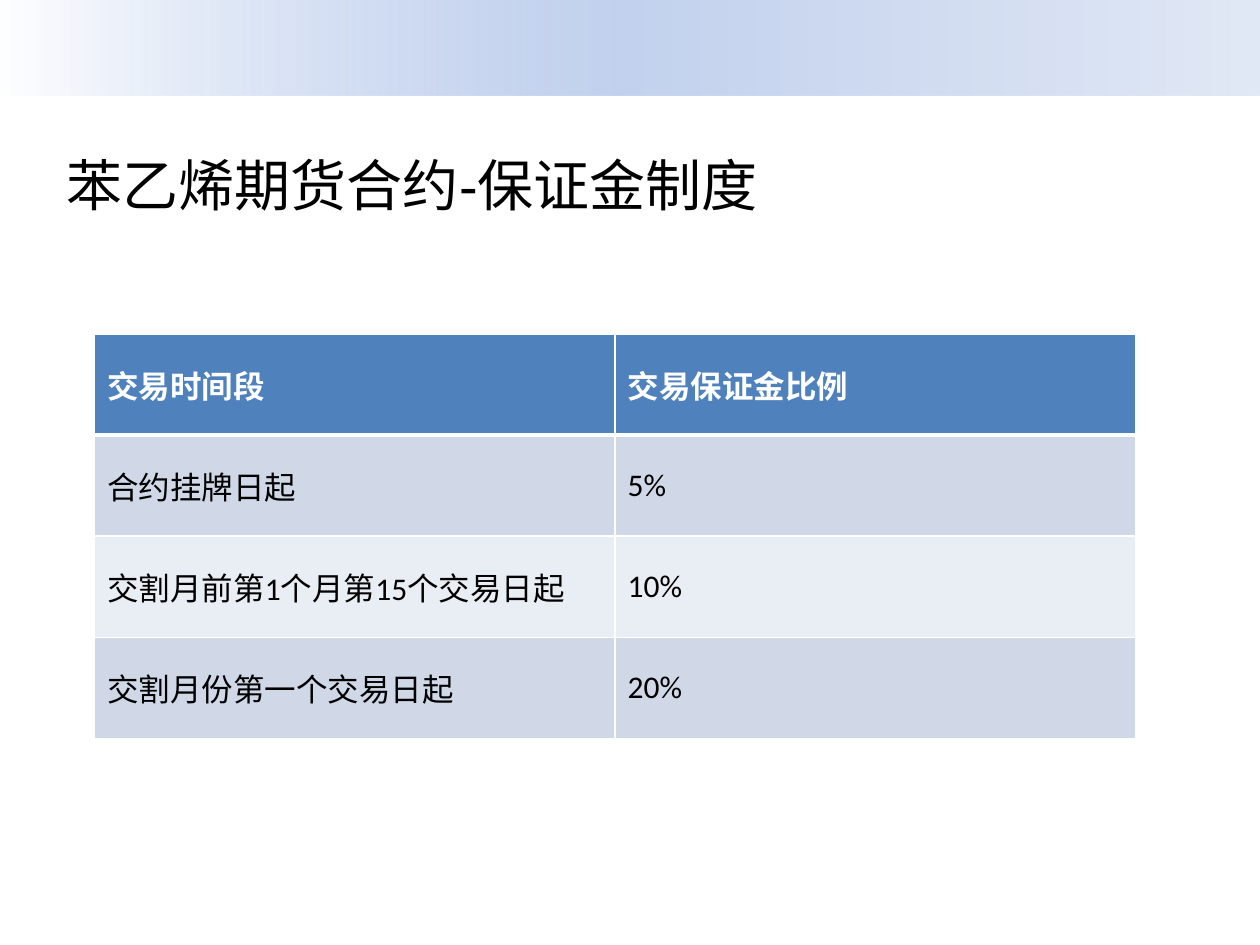
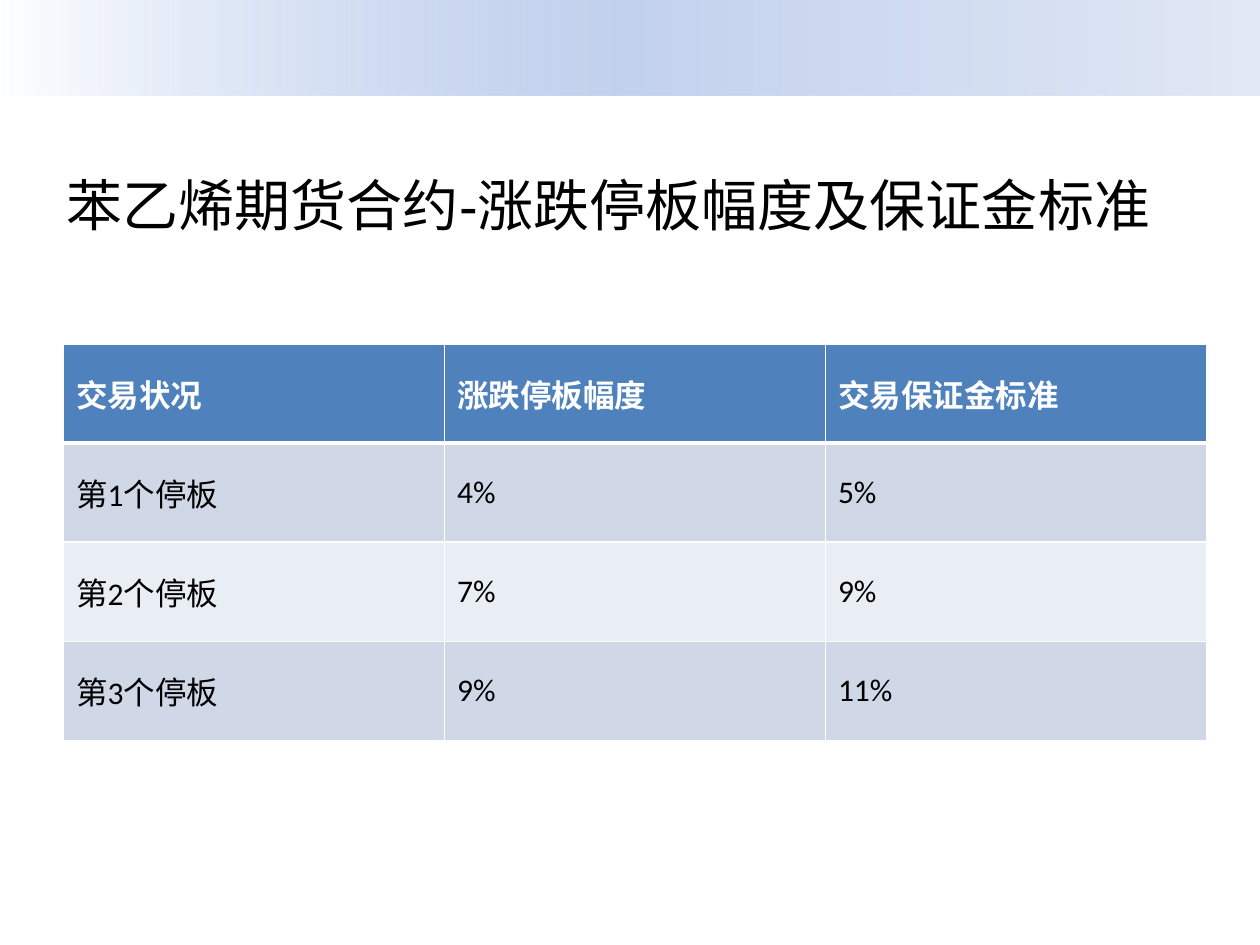
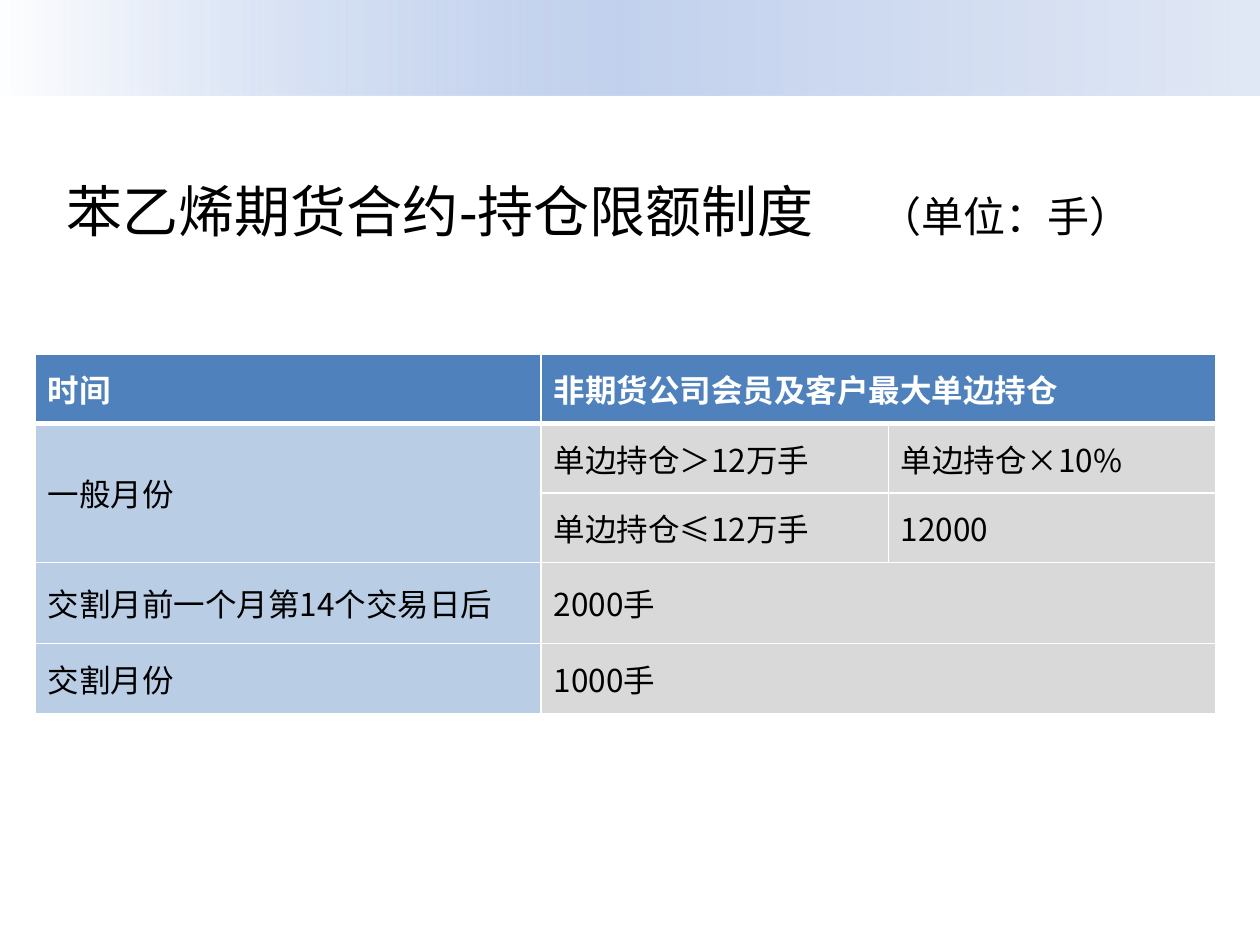
from lxml.etree import SubElement
from pptx import Presentation
from pptx.dml.color import RGBColor
from pptx.enum.lang import MSO_LANGUAGE_ID as Language
from pptx.enum.shapes import MSO_SHAPE as Preset
from pptx.enum.text import MSO_ANCHOR as Anchor, MSO_AUTO_SIZE as AutoSize, PP_ALIGN as Align
from pptx.oxml import parse_xml
from pptx.oxml.ns import nsdecls, qn
from pptx.util import Cm, Pt

COLORS = {
    "text": "000000", "white": "FFFFFF", "header": "4F81BD",
    "band_dark": "D0D8E8", "band_light": "E9EDF4",
    "period": "B9CDE5", "limit": "D9D9D9",
    "glow_start": "9AB5E4", "glow_middle": "C2D1ED", "glow_end": "E1E8F5",
}
TITLE_FONT, TABLE_FONT, CJK_FONT = "Arial", "Calibri", "Noto Sans CJK JP"


def add_span(para, text, *, size=18, font=TABLE_FONT, color="text", bold=False):
    span = para.add_run()
    span.text = text
    span.font.size = Pt(size)
    span.font.name = font
    span.font.bold = bold
    span.font.color.rgb = RGBColor.from_string(COLORS[color])
    span.font.language_id = Language.SIMPLIFIED_CHINESE


def banded(row, column):
    return "band_dark" if row % 2 else "band_light"


def by_column(row, column):
    return "limit" if column else "period"


class ContractDeck:
    def __init__(self):
        self.deck = Presentation()
        self.deck.slide_width, self.deck.slide_height = Cm(25.4), Cm(19.05)
        self.layout = self.deck.slide_layouts[5]
        self.page = None

    def add_page(self):
        self.page = self.deck.slides.add_slide(self.layout)
        if len(self.deck.slides) == 1:
            self.add_top_band()

    def add_top_band(self):
        """Draw the gradient band and hand it to the layout all pages share."""
        band = self.page.shapes.add_shape(Preset.RECTANGLE, 0, 0, self.deck.slide_width, Cm(1.93))
        band.shadow.inherit = False
        band.line.fill.background()
        stops = [(0, "glow_start", 0), (50, "glow_middle", 100), (100, "glow_end", 100)]
        stop_xml = "".join(
            f'<a:gs pos="{place * 1000}"><a:srgbClr val="{COLORS[color]}">'
            f'<a:alpha val="{opacity * 1000}"/></a:srgbClr></a:gs>'
            for place, color, opacity in stops)
        gradient = parse_xml(
            f'<a:gradFill {nsdecls("a")} rotWithShape="1"><a:gsLst>{stop_xml}</a:gsLst>'
            '<a:lin ang="0" scaled="0"/></a:gradFill>')
        band.element.spPr.find(qn("a:prstGeom")).addnext(gradient)
        self.layout.shapes.element.insert(2, band.element)

    def add_title(self, text, top, height=2, unit=None):
        title = self.page.shapes.title
        title.left, title.top, title.width, title.height = Cm(1.09), Cm(top), Cm(22.86), Cm(height)
        frame = title.text_frame
        frame.word_wrap = True
        frame.auto_size = AutoSize.NONE
        frame.vertical_anchor = Anchor.MIDDLE
        para = frame.paragraphs[0]
        para.alignment = Align.LEFT
        if unit:
            tabs = SubElement(para._p.get_or_add_pPr(), qn("a:tabLst"))
            SubElement(tabs, qn("a:tab"), pos=str(Cm(16.38)), algn="l")
            text += "\t"
        add_span(para, text, size=32, font=TITLE_FONT)
        if unit:
            add_span(para, unit, size=24, font=CJK_FONT)

    def add_table(self, rows, left, top, widths, heights, body_fill=banded, font=TABLE_FONT, merges=()):
        """Fill a grid; merges lists (first row, first column, last row, last column)."""
        table = self.page.shapes.add_table(
            len(rows), len(widths), Cm(left), Cm(top), Cm(sum(widths)), Cm(sum(heights))).table
        for column, width in zip(table.columns, widths):
            column.width = Cm(width)
        for line, height in zip(table.rows, heights):
            line.height = Cm(height)
        for row, texts in enumerate(rows):
            for column, text in enumerate(texts):
                cell = table.cell(row, column)
                self.add_borders(cell, row)
                cell.fill.solid()
                fill = body_fill(row, column) if row else "header"
                cell.fill.fore_color.rgb = RGBColor.from_string(COLORS[fill])
                cell.vertical_anchor = Anchor.MIDDLE
                if text:
                    add_span(cell.text_frame.paragraphs[0], text, font=font,
                             color="text" if row else "white", bold=row == 0)
        for first_row, first_column, last_row, last_column in merges:
            table.cell(first_row, first_column).merge(table.cell(last_row, last_column))

    def add_borders(self, cell, row):
        """Rule the cell in white, with a thick line under the header."""
        weights = {"L": 1, "R": 1, "T": 3 if row == 1 else 1, "B": 3 if row == 0 else 1}
        properties = cell._tc.get_or_add_tcPr()
        for side, weight in weights.items():
            border = SubElement(properties, qn(f"a:ln{side}"), w=str(Pt(weight)))
            fill = SubElement(border, qn("a:solidFill"))
            SubElement(fill, qn("a:srgbClr"), val=COLORS["white"])


def main():
    contract = ContractDeck()

    contract.add_page()
    contract.add_title("苯乙烯期货合约-保证金制度", top=2.72)
    margin_rows = [
        ("交易时间段", "交易保证金比例"),
        ("合约挂牌日起", "5%"),
        ("交割月前第1个月第15个交易日起", "10%"),
        ("交割月份第一个交易日起", "20%"),
    ]
    contract.add_table(margin_rows, 1.91, 6.73, [10.49] * 2, [2.04] * 4)

    contract.add_page()
    contract.add_title("苯乙烯期货合约-涨跌停板幅度及保证金标准", top=3.12)
    price_limit_rows = [
        ("交易状况", "涨跌停板幅度", "交易保证金标准"),
        ("第1个停板", "4%", "5%"),
        ("第2个停板", "7%", "9%"),
        ("第3个停板", "9%", "11%"),
    ]
    contract.add_table(price_limit_rows, 1.28, 6.93, [7.68] * 3, [2] * 4)

    contract.add_page()
    contract.add_title("苯乙烯期货合约-持仓限额制度", top=3.33, height=1.8, unit="（单位：手）")
    position_rows = [
        ("时间", "非期货公司会员及客户最大单边持仓", None),
        ("一般月份", "单边持仓＞12万手", "单边持仓×10%"),
        (None, "单边持仓≤12万手", "12000"),
        ("交割月前一个月第14个交易日后", "2000手", None),
        ("交割月份", "1000手", None),
    ]
    contract.add_table(
        position_rows, 0.71, 7.14, [10.2, 7, 6.6], [1.4, 1.4, 1.4, 1.63, 1.42],
        body_fill=by_column, font=CJK_FONT,
        merges=[(0, 1, 0, 2), (1, 0, 2, 0), (3, 1, 3, 2), (4, 1, 4, 2)])

    contract.deck.save("out.pptx")


if __name__ == "__main__":
    main()
